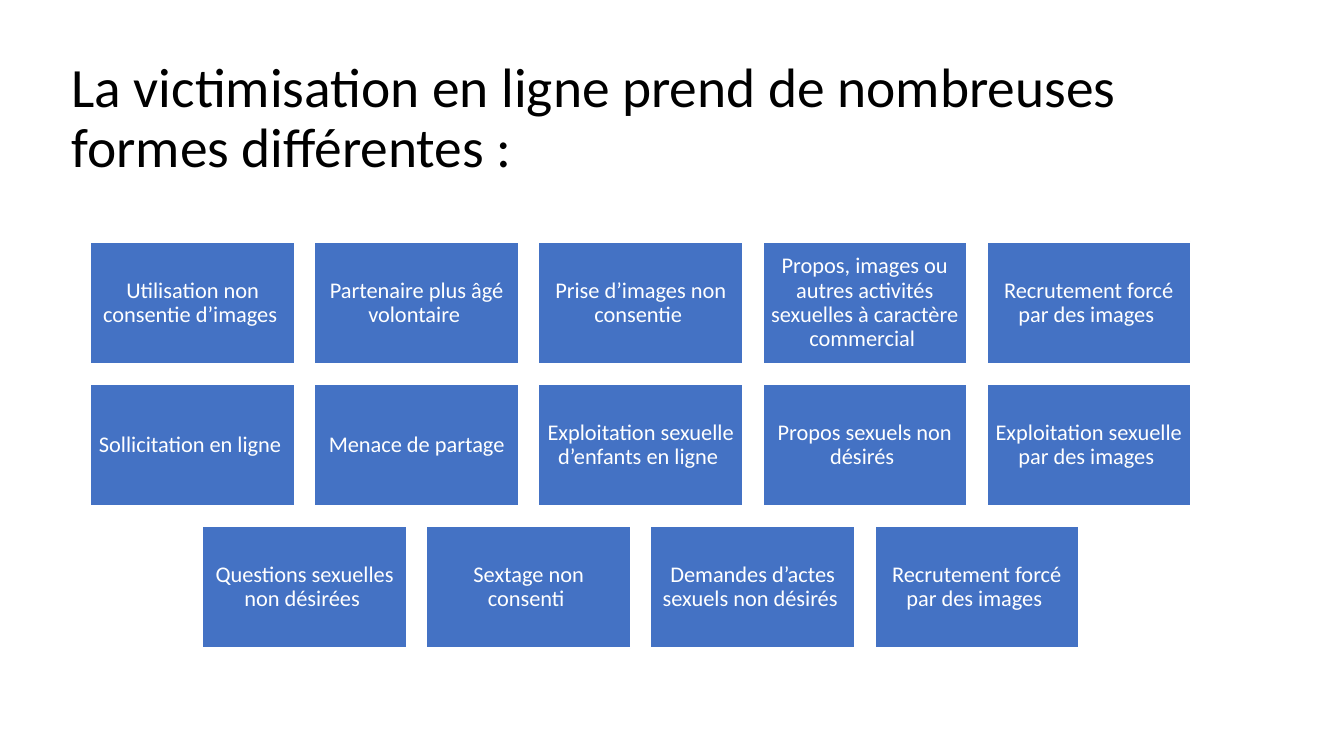
from dataclasses import dataclass

import pptx
import pptx.dml.color
import pptx.enum.shapes
import pptx.enum.text
import pptx.util
from pptx.util import Inches


@dataclass(frozen=True)
class Theme:
    font: str = "Calibri"
    title_size: float = 39.6
    card_size: float = 16
    black: str = "000000"
    white: str = "FFFFFF"
    blue: str = "4472C4"
    line_spacing: float = 0.9


@dataclass(frozen=True)
class Box:
    left: float
    top: float
    width: float
    height: float


THEME = Theme()

TITLE = "La victimisation en ligne prend de nombreuses formes différentes\u00a0:"
CARD_ROWS = [
    [
        "Utilisation non consentie d’images ",
        "Partenaire plus âgé volontaire ",
        "Prise d’images non consentie ",
        "Propos, images ou autres activités sexuelles à caractère commercial ",
        "Recrutement forcé par des images ",
    ],
    [
        "Sollicitation en ligne ",
        "Menace de partage",
        "Exploitation sexuelle d’enfants en ligne ",
        "Propos sexuels non désirés ",
        "Exploitation sexuelle par des images ",
    ],
    [
        "Questions sexuelles non désirées ",
        "Sextage non consenti ",
        "Demandes d’actes sexuels non désirés ",
        "Recrutement forcé par des images ",
    ],
]


def color(value):
    return pptx.dml.color.RGBColor.from_string(value)


def write_text(frame, text, size, text_color, alignment):
    frame.text = text
    frame.word_wrap = True
    frame.auto_size = pptx.enum.text.MSO_AUTO_SIZE.NONE
    frame.vertical_anchor = pptx.enum.text.MSO_ANCHOR.MIDDLE
    para = frame.paragraphs[0]
    para.alignment = alignment
    para.line_spacing = THEME.line_spacing
    para.font.name = THEME.font
    para.font.size = pptx.util.Pt(size)
    para.font.color.rgb = color(text_color)


def add_title(page, box):
    title = page.shapes.title
    title.left, title.top = Inches(box.left), Inches(box.top)
    title.width, title.height = Inches(box.width), Inches(box.height)
    write_text(title.text_frame, TITLE, THEME.title_size, THEME.black,
               pptx.enum.text.PP_ALIGN.LEFT)


def add_card(page, box, text):
    card = page.shapes.add_shape(
        pptx.enum.shapes.MSO_SHAPE.RECTANGLE,
        Inches(box.left), Inches(box.top), Inches(box.width), Inches(box.height))
    card.shadow.inherit = False
    card.fill.solid()
    card.fill.fore_color.rgb = color(THEME.blue)
    card.line.color.rgb = color(THEME.white)
    card.line.width = pptx.util.Pt(1)
    frame = card.text_frame
    frame.margin_left = frame.margin_right = Inches(0.07)
    frame.margin_top = frame.margin_bottom = Inches(0.07)
    write_text(frame, text, THEME.card_size, THEME.white,
               pptx.enum.text.PP_ALIGN.CENTER)


def add_card_grid(page, box, rows, gap=0.2):
    columns = max(len(row) for row in rows)
    width = (box.width - gap * (columns - 1)) / columns
    height = (box.height - gap * (len(rows) - 1)) / len(rows)
    for row_index, row in enumerate(rows):
        # Shorter rows are centred in the grid
        indent = (columns - len(row)) * (width + gap) / 2
        top = box.top + row_index * (height + gap)
        for column, text in enumerate(row):
            left = box.left + indent + column * (width + gap)
            add_card(page, Box(left, top, width, height), text)


def main():
    deck = pptx.Presentation()
    deck.slide_width, deck.slide_height = Inches(13.33), Inches(7.5)
    page = deck.slides.add_slide(deck.slide_layouts.get_by_name("Title Only"))

    # Heading
    add_title(page, Box(0.61, 0.46, 12.02, 1.45))
    # Forms of online victimisation
    add_card_grid(page, Box(0.9, 2.4, 10.91, 4.03), CARD_ROWS)

    deck.save("out.pptx")


if __name__ == "__main__":
    main()
